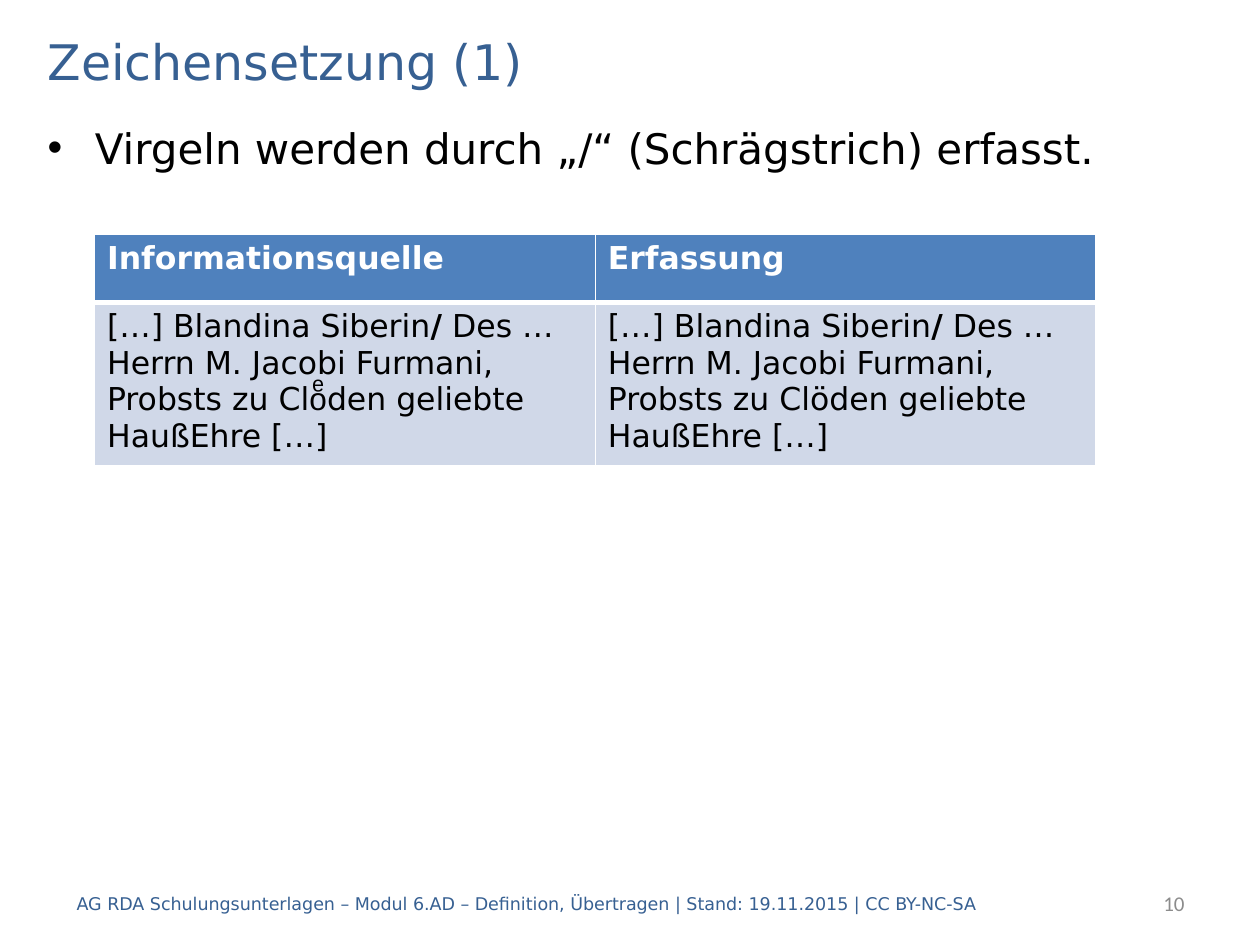
import pptx
import pptx.util
import pptx.dml.color
import pptx.enum.text
import lxml.etree

presentation = pptx.Presentation()
presentation.slide_width = pptx.util.Inches(10)
presentation.slide_height = pptx.util.Inches(7.5)
slide = presentation.slides.add_slide(presentation.slide_layouts[6])
column = presentation.slide_width / 100
row = presentation.slide_height / 100
drawing = "http://schemas.openxmlformats.org/drawingml/2006/main"
anchors = pptx.enum.text.MSO_ANCHOR
alignments = pptx.enum.text.PP_ALIGN


def color(value):
    return pptx.dml.color.RGBColor.from_string(value)


def add_run(paragraph, text, size, fill, bold=False, name="DejaVu Sans"):
    run = paragraph.add_run()
    run.text = text
    formats = {"size": pptx.util.Pt(size), "bold": bold, "name": name}
    for attribute, value in formats.items():
        setattr(run.font, attribute, value)
    run.font.color.rgb = color(fill)


footer = ("AG RDA Schulungsunterlagen – Modul 6.AD – Definition, Übertragen"
          " | Stand: 19.11.2015 | CC BY-NC-SA")
texts = [
    ("Zeichensetzung (1)", (2.8, 2.67, 94.5, 7.47), 28, "376092", "DejaVu Sans", anchors.MIDDLE, alignments.LEFT),
    ("Virgeln werden durch „/“ (Schrägstrich) erfasst.", (2.8, 12.27, 94.5, 79.73), 24, "000000", "DejaVu Sans", anchors.TOP, alignments.LEFT),
    (footer, (5.1, 92.93, 82.7, 5.33), 10, "376092", "DejaVu Sans", anchors.MIDDLE, alignments.LEFT),
    ("10", (79.1, 92.93, 15.9, 5.33), 12, "8C8C8C", "Calibri", anchors.MIDDLE, alignments.RIGHT),
]
for text, (left, top, width, height), size, fill, name, anchor, alignment in texts:
    shape = slide.shapes.add_textbox(
        int(left * column), int(top * row), int(width * column), int(height * row))
    for attribute, value in {"word_wrap": True, "vertical_anchor": anchor}.items():
        setattr(shape.text_frame, attribute, value)
    paragraph = shape.text_frame.paragraphs[0]
    paragraph.alignment = alignment
    add_run(paragraph, text, size, fill, name=name)
    if anchor == anchors.TOP:
        properties = paragraph._p.get_or_add_pPr()
        indent = int(3.75 * column)
        properties.set("marL", str(indent))
        properties.set("indent", str(-indent))
        bullet_font = lxml.etree.SubElement(properties, f"{{{drawing}}}buFont")
        bullet_font.set("typeface", "Arial")
        bullet = lxml.etree.SubElement(properties, f"{{{drawing}}}buChar")
        bullet.set("char", "•")

opening = [("[…] Blandina Siberin", False, "DejaVu Sans"), ("/", True, "DejaVu Sans")]
sentence = " Des … Herrn M. Jacobi Furmani, Probsts zu Cl"
ending = "den geliebte HaußEhre […]"
cells = [
    [[("Informationsquelle", True, "DejaVu Sans")], [("Erfassung", True, "DejaVu Sans")]],
    [opening + [(sentence, False, "DejaVu Sans"), ("oͤ", False, "Arial"), (ending, False, "DejaVu Sans")],
     opening + [(sentence + "ö" + ending, False, "DejaVu Sans")]],
]
row_styles = [
    {"height": 7.2, "fill": "4F81BD", "text": "FFFFFF", "borders": {"lnL": 1, "lnR": 1, "lnT": 1, "lnB": 3}},
    {"height": 16.67, "fill": "D0D8E8", "text": "000000", "borders": {"lnL": 1, "lnR": 1, "lnT": 3, "lnB": 1}},
]
table = slide.shapes.add_table(
    2, 2, int(7.5 * column), int(24.8 * row), int(79.5 * column), int(23.87 * row)).table
for row_index, style in enumerate(row_styles):
    table.rows[row_index].height = int(style["height"] * row)
    for column_index, runs in enumerate(cells[row_index]):
        cell = table.cell(row_index, column_index)
        cell.fill.solid()
        cell.fill.fore_color.rgb = color(style["fill"])
        for text, bold, name in runs:
            add_run(cell.text_frame.paragraphs[0], text, 18, style["text"], bold, name)
        properties = cell._tc.get_or_add_tcPr()
        for position, (side, points) in enumerate(style["borders"].items()):
            line = lxml.etree.Element(f"{{{drawing}}}{side}", w=str(pptx.util.Pt(points)))
            solid = lxml.etree.SubElement(line, f"{{{drawing}}}solidFill")
            lxml.etree.SubElement(solid, f"{{{drawing}}}srgbClr", val="FFFFFF")
            properties.insert(position, line)

presentation.save("out.pptx")
